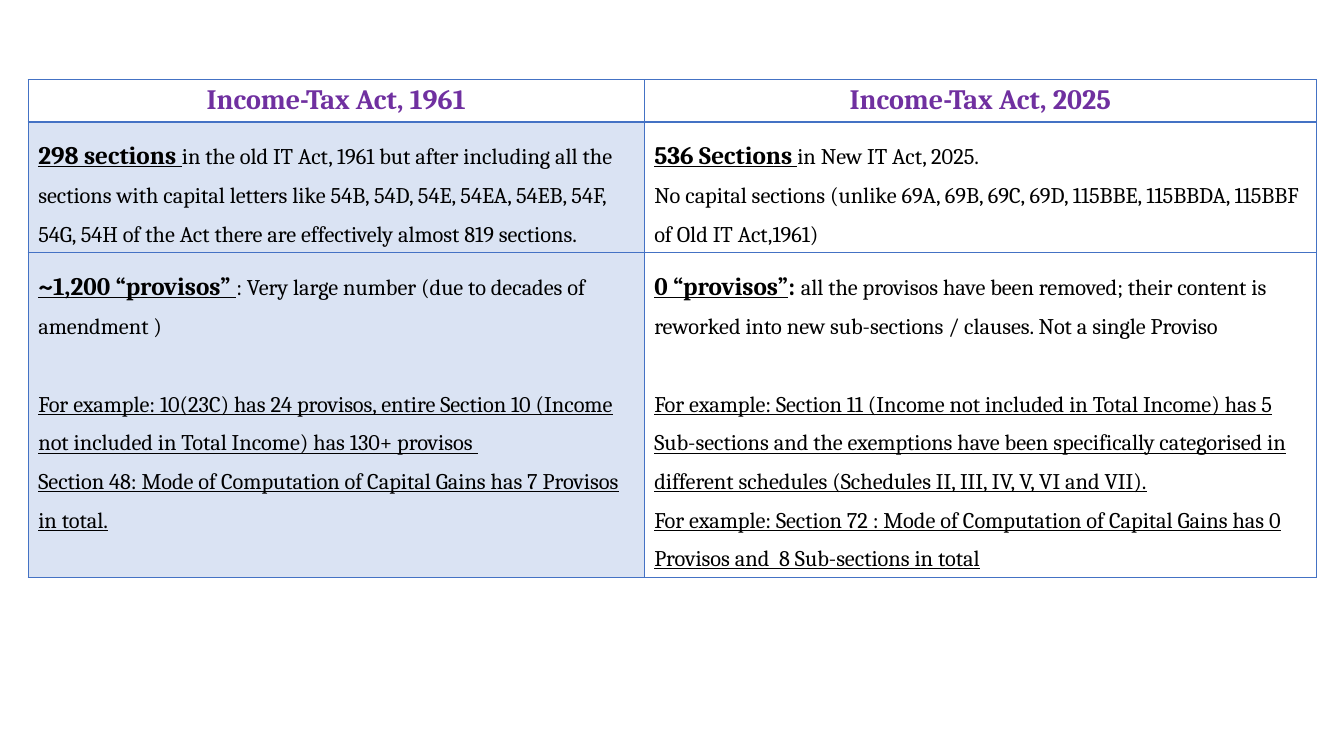
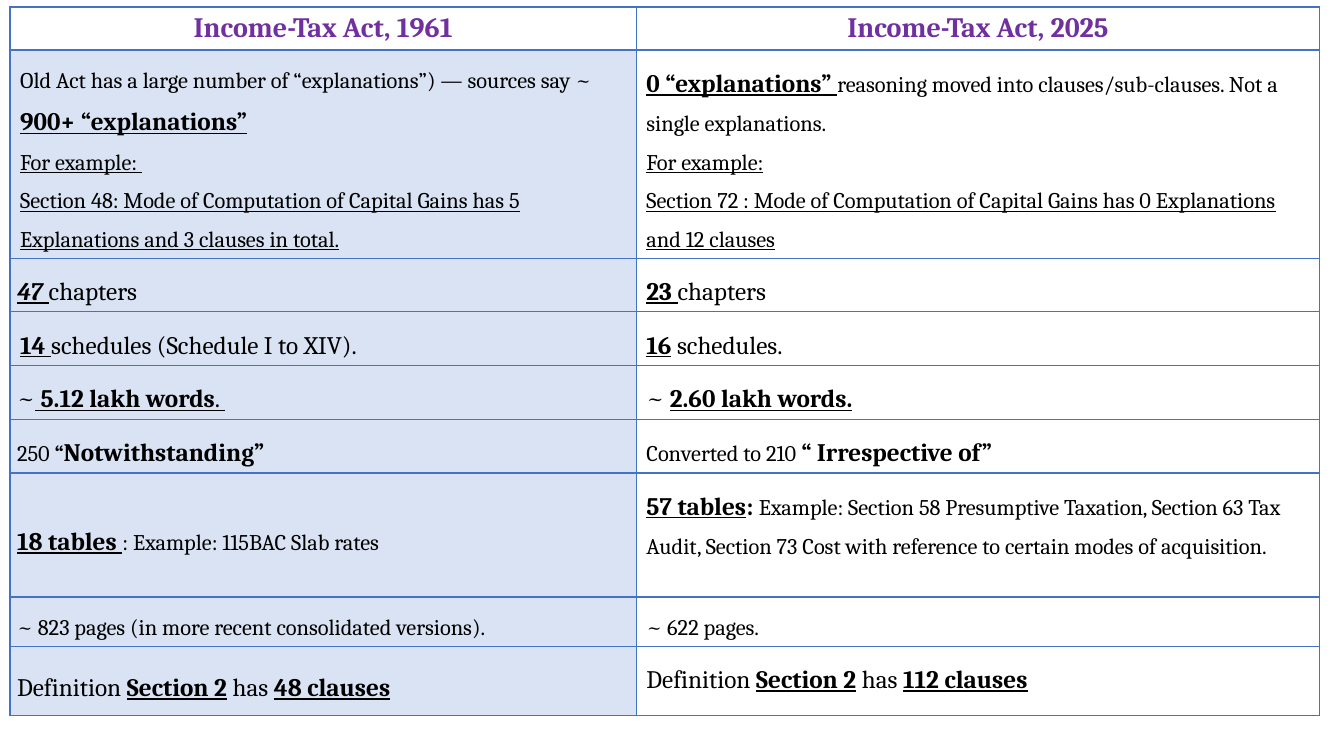
from lxml.etree import SubElement
from pptx import Presentation
from pptx.dml.color import RGBColor as Rgb
from pptx.enum.text import MSO_ANCHOR as Anchor, PP_ALIGN as Align
from pptx.oxml.ns import qn
from pptx.util import Inches, Pt

COLORS = {"title": "7030A0", "text": "000000", "border": "4472C4", "old_act": "DAE3F3"}
FONT = "Cambria"
SIZES = {"title": 20, "large": 18, "body": 16}
WIDTH, HEIGHT = Inches(13.33), Inches(7.5)
HEADINGS = ("Income-Tax Act, 1961", "Income-Tax Act, 2025")
THIN, THICK = 1, 2
EXAMPLE_GAP = 28

# fmt: off
SECTION_ROWS = [
    (
        [[("298 sections ", "LBU"), ("in the old IT Act, 1961 but after including all the sections with capital letters like 54B, 54D, 54E, 54EA, 54EB, 54F, 54G, 54H of the Act there are effectively almost 819 sections.", "")]],
        [[("536 Sections", "LBU"), (" ", "BU"), ("in New IT Act, 2025.", "")],
         [("No capital sections (unlike 69A, 69B, 69C, 69D, 115BBE, 115BBDA, 115BBF of Old IT Act,1961)", "")]],
    ),
    (
        [[("~1,200 “provisos” ", "LBU"), (": Very large number (due to decades of amendment )", "")],
         [("For example: 10(23C) has 24 provisos, entire Section 10 (Income not included in Total Income) has 130+ provisos ", "UG")],
         [("Section 48: Mode of Computation of Capital Gains has 7 Provisos in total.", "U")]],
        [[("0 “provisos”", "LBU"), (": ", "LB"), ("all the provisos have been removed; their content is reworked into new sub-sections / clauses. Not a single Proviso", "")],
         [("For example: Section 11 (Income not included in Total Income) has 5 Sub-sections and the exemptions have been specifically categorised in different schedules (Schedules II, III, IV, V, VI and VII).", "UG")],
         [("For example: Section 72 : Mode of Computation of Capital Gains has 0 Provisos and  8 Sub-sections in total", "U")]],
    ),
]

COUNT_ROWS = [
    (
        [[("Old Act has a large number of “explanations”) — sources say ~ ", ""), ("900+ “explanations”", "LBU")],
         [("For example: ", "U")],
         [("Section 48: Mode of Computation of Capital Gains has 5 Explanations and 3 clauses in total.", "U")]],
        [[("0 “explanations” ", "LBU"), ("reasoning moved into clauses/sub-clauses. Not a single explanations.", "")],
         [("For example:", "U")],
         [("Section 72 : Mode of Computation of Capital Gains has 0 Explanations and 12 clauses", "U")]],
    ),
    ([[("47 ", "LBIU"), ("chapters", "L")]], [[("23 ", "LBU"), ("chapters", "L")]]),
    ([[("14 ", "LBU"), ("schedules (Schedule I to XIV).", "L")]], [[("16", "LBU"), (" schedules.", "L")]]),
    ([[("~", "L"), (" ", "LU"), ("5.12 lakh words", "LBU"), (". ", "LU")]], [[("~ ", "L"), ("2.60 lakh words.", "LBU")]]),
    ([[("250", ""), (" “", "B"), ("Notwithstanding”", "LB")]], [[("Converted to 210 ", ""), ("“ Irrespective of”", "LB")]]),
    (
        [[("18 tables", "LBU"), (" ", "LU"), (": Example: 115BAC Slab rates", "")]],
        [[("57 tables", "LBU"), (": ", "LB"), ("Example: Section 58 Presumptive Taxation, Section 63 Tax Audit, Section 73 Cost with reference to certain modes of acquisition.", "")]],
    ),
    ([[("~ 823 pages (in more recent consolidated versions). ", "")]], [[("~ 622 pages.", "")]]),
    (
        [[("Definition ", "L"), ("Section 2", "LBU"), (" has ", "L"), ("48 clauses", "LBU")]],
        [[("Definition ", "L"), ("Section 2", "LBU"), (" has ", "L"), ("112 clauses", "LBU")]],
    ),
]
# fmt: on

COMPACT_ROWS = {2, 4, 5, 6, 7, 8}


def across(percent):
    return int(WIDTH * percent / 100)


def down(percent):
    return int(HEIGHT * percent / 100)


def add_span(para, text, size, color, flags=""):
    span = para.add_run()
    span.text = text
    font = span.font
    font.name, font.size = FONT, Pt(size)
    font.color.rgb = Rgb.from_string(COLORS[color])
    font.bold, font.italic, font.underline = ("B" in flags, "I" in flags, "U" in flags)


def set_borders(cell, top, bottom):
    properties = cell._tc.get_or_add_tcPr()
    for side, points in (("L", THIN), ("R", THIN), ("T", top), ("B", bottom)):
        line = SubElement(properties, qn(f"a:ln{side}"), w=str(Pt(points)))
        fill = SubElement(line, qn("a:solidFill"))
        SubElement(fill, qn("a:srgbClr"), val=COLORS["border"])


def fill_heading(cell, text):
    para = cell.text_frame.paragraphs[0]
    para.alignment = Align.CENTER
    add_span(para, text, SIZES["title"], "title", "B")
    set_borders(cell, THIN, THICK)
    cell.fill.background()


def fill_body(cell, paragraphs, top, old_act, compact):
    frame = cell.text_frame
    for index, spans in enumerate(paragraphs):
        para = frame.add_paragraph() if index else frame.paragraphs[0]
        para.line_spacing = 1.5
        if compact:
            para.alignment = Align.JUSTIFY
        for text, flags in spans:
            size = SIZES["large" if "L" in flags else "body"]
            add_span(para, text, size, "text", flags)
            if "G" in flags:
                para.space_before = Pt(EXAMPLE_GAP)
    if compact:
        cell.vertical_anchor = Anchor.MIDDLE
        cell.margin_left = cell.margin_right = Inches(0.07)
        cell.margin_top = cell.margin_bottom = 0
    set_borders(cell, top, THIN)
    if old_act:
        cell.fill.solid()
        cell.fill.fore_color.rgb = Rgb.from_string(COLORS["old_act"])
    else:
        cell.fill.background()


def add_comparison(deck, left, top, columns, heights, rows, compact_rows=()):
    page = deck.slides.add_slide(deck.slide_layouts[6])
    table = page.shapes.add_table(
        len(heights), len(columns), across(left), down(top),
        across(sum(columns)), down(sum(heights)),
    ).table
    table.first_row = table.horz_banding = False
    for column, width in zip(table.columns, columns):
        column.width = across(width)
    for row, height in zip(table.rows, heights):
        row.height = down(height)
    for column, heading in enumerate(HEADINGS):
        fill_heading(table.cell(0, column), heading)
    for number, row in enumerate(rows, start=1):
        for column, paragraphs in enumerate(row):
            old_act = column == 0
            fill_body(
                table.cell(number, column), paragraphs,
                THICK if number == 1 else THIN,
                old_act, old_act and number in compact_rows,
            )


def main():
    deck = Presentation()
    deck.slide_width, deck.slide_height = WIDTH, HEIGHT
    add_comparison(deck, 2.1, 10.53, (45.83, 50.03), (5.6, 17.3, 42.8), SECTION_ROWS)
    add_comparison(
        deck, 0.75, 0.93, (46.6, 50.85),
        (5.7, 27.5, *[7.1] * 4, 16.4, 6.5, 9.2), COUNT_ROWS, COMPACT_ROWS,
    )
    deck.save("out.pptx")


if __name__ == "__main__":
    main()
